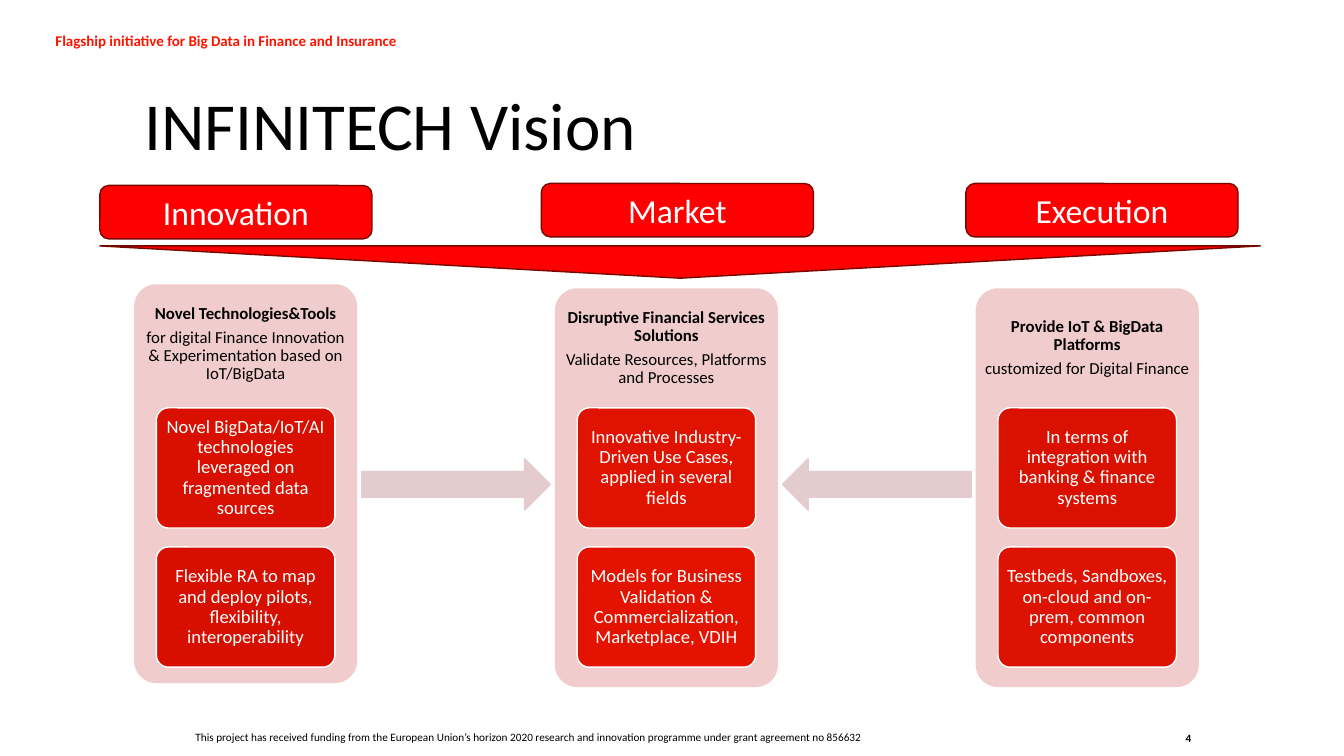
from dataclasses import dataclass

from pptx import Presentation
from pptx import util as u
from pptx.dml import color
from pptx.enum import shapes, text

COLORS = {
    "red": "FF0000", "tagline": "FF1400", "outline": "750800",
    "panel": "F0CCCC", "arrow": "E3CBCE", "white": "FFFFFF", "black": "000000",
}
FONT = "Calibri"
SLIDE_W, SLIDE_H = 13.33, 7.5
GRID = 100
PANEL_LEFT, PANEL_STEP, PANEL_W, PANEL_H = 9.98, 31.31, 16.6, 52.75
CARD_INSET, CARD_TOP, CARD_STEP = 1.66, 53.95, 18.4
CARD_W, CARD_H = PANEL_W - 2 * CARD_INSET, 15.9
PILL_W, PILL_H = 20.25, 7.07
ARROW_TOP, ARROW_W, ARROW_H = 60.67, 14.03, 6.8
NO_INSET = (0, 0, 0, 0)
PILL_INSET = (0.1, 0.05, 0.1, 0.05)
PANEL_INSET = (0, 0, 0, 2.77)
CARD_INSETS = (0.03, 0.02, 0.03, 0.02)


@dataclass
class Box:
    col: float
    row: float
    cols: float
    rows: float


@dataclass
class Label:
    box: Box
    words: str
    size: float
    color: str = "black"
    bold: bool = False
    leading: float = 1.0
    wrap: bool = True


@dataclass
class Card:
    words: str
    fill: str


@dataclass
class Pillar:
    name: str
    pill_col: float
    pill_row: float
    panel_row: float
    heading: str
    detail: str
    cards: tuple[Card, Card]


LABELS = [
    Label(Box(88.22, 96.8, 1.13, 1.73), "4", 8, bold=True, wrap=False),
    Label(Box(14.55, 96.67, 51.39, 1.73),
          "This project has received funding from the European Union’s horizon 2020 "
          "research and innovation programme under grant agreement no 856632", 8),
    Label(Box(4.13, 4.4, 27.08, 2.13),
          "Flagship initiative for Big Data in Finance and Insurance",
          10.7, "tagline", True, 0.9),
    Label(Box(10.73, 12.27, 78.62, 9.73), "INFINITECH Vision", 48, leading=0.9),
]
PILLARS = [
    Pillar("Innovation", 7.43, 24.53, 37.6, "Novel Technologies&Tools",
           "for digital Finance Innovation & Experimentation based on IoT/BigData",
           (Card("Novel BigData/IoT/AI technologies leveraged on fragmented data sources",
                 "D91000"),
            Card("Flexible RA to map and deploy pilots, flexibility, interoperability",
                 "D60F00"))),
    Pillar("Market", 40.28, 24.27, 38.13, "Disruptive Financial Services Solutions",
           "Validate Resources, Platforms and Processes",
           (Card("Innovative Industry-Driven Use Cases, applied in several fields",
                 "E01300"),
            Card("Models for Business Validation & Commercialization, Marketplace, VDIH",
                 "E31300"))),
    Pillar("Execution", 71.87, 24.27, 38.13, "Provide IoT & BigData Platforms",
           "customized for Digital Finance",
           (Card("In terms of integration with banking & finance systems", "DB1100"),
            Card("Testbeds, Sandboxes, on-cloud and on-prem, common components",
                 "DE1200"))),
]


def rgb(name: str) -> color.RGBColor:
    return color.RGBColor.from_string(COLORS.get(name, name))


def place(box: Box) -> tuple[int, int, int, int]:
    col, row = SLIDE_W / GRID, SLIDE_H / GRID
    return (u.Inches(box.col * col), u.Inches(box.row * row),
            u.Inches(box.cols * col), u.Inches(box.rows * row))


def set_insets(tf, insets: tuple) -> None:
    tf.margin_left, tf.margin_top, tf.margin_right, tf.margin_bottom = map(u.Inches, insets)


def format_paragraph(p, size: float, ink: str, bold: bool, leading: float) -> None:
    p.line_spacing = leading
    for r in p.runs:
        r.font.name = FONT
        r.font.size = u.Pt(size)
        r.font.bold = bold
        r.font.color.rgb = rgb(ink)


def draw_label(s, label: Label) -> None:
    tf = s.shapes.add_textbox(*place(label.box)).text_frame
    set_insets(tf, NO_INSET)
    tf.word_wrap = label.wrap
    tf.text = label.words
    format_paragraph(tf.paragraphs[0], label.size, label.color, label.bold, label.leading)


def draw_shape(s, kind: shapes.MSO_SHAPE, box: Box, fill: str, line: str = ""):
    sp = s.shapes.add_shape(kind, *place(box))
    sp.shadow.inherit = False
    sp.fill.solid()
    sp.fill.fore_color.rgb = rgb(fill)
    if line:
        sp.line.color.rgb = rgb(line)
        sp.line.width = u.Pt(1)
    else:
        sp.line.fill.background()
    return sp


def write(sp, lines: list[str], size: float, ink: str, insets: tuple,
          leading: float = 0.9, after: float = 0.35) -> None:
    tf = sp.text_frame
    tf.word_wrap = True
    tf.vertical_anchor = text.MSO_ANCHOR.MIDDLE
    set_insets(tf, insets)
    tf.text = "\n".join(lines)
    for i, p in enumerate(tf.paragraphs):
        p.alignment = text.PP_ALIGN.CENTER
        p.space_after = u.Pt(round(size * after))
        format_paragraph(p, size, ink, len(lines) > 1 and i == 0, leading)


def draw_pillar(s, index: int, pillar: Pillar) -> None:
    rounded = shapes.MSO_SHAPE.ROUNDED_RECTANGLE
    left = PANEL_LEFT + index * PANEL_STEP
    pill = Box(pillar.pill_col, pillar.pill_row, PILL_W, PILL_H)
    sp = draw_shape(s, rounded, pill, "red", "outline")
    write(sp, [pillar.name], 24, "white", PILL_INSET, 1.0, 0)
    sp = draw_shape(s, rounded, Box(left, pillar.panel_row, PANEL_W, PANEL_H), "panel")
    sp.adjustments[0] = 0.1
    write(sp, [pillar.heading, pillar.detail], 12, "black", PANEL_INSET)
    for i, card in enumerate(pillar.cards):
        box = Box(left + CARD_INSET, CARD_TOP + i * CARD_STEP, CARD_W, CARD_H)
        sp = draw_shape(s, rounded, box, card.fill, "white")
        sp.adjustments[0] = 0.1
        write(sp, [card.words], 13.3, "white", CARD_INSETS)


def main() -> None:
    prs = Presentation()
    prs.slide_width, prs.slide_height = u.Inches(SLIDE_W), u.Inches(SLIDE_H)
    s = prs.slides.add_slide(prs.slide_layouts[6])
    for label in LABELS:
        draw_label(s, label)
    funnel = draw_shape(s, shapes.MSO_SHAPE.ISOSCELES_TRIANGLE,
                        Box(7.43, 32.53, 86.35, 4.27), "red", "outline")
    funnel.rotation = 180
    for i, pillar in enumerate(PILLARS):
        draw_pillar(s, i, pillar)
    gap_margin = (PANEL_STEP - PANEL_W - ARROW_W) / 2
    arrows = (shapes.MSO_SHAPE.RIGHT_ARROW, shapes.MSO_SHAPE.LEFT_ARROW)
    for i, kind in enumerate(arrows):
        left = PANEL_LEFT + i * PANEL_STEP + PANEL_W + gap_margin
        draw_shape(s, kind, Box(left, ARROW_TOP, ARROW_W, ARROW_H), "arrow", "arrow")
    prs.save("out.pptx")


if __name__ == "__main__":
    main()
